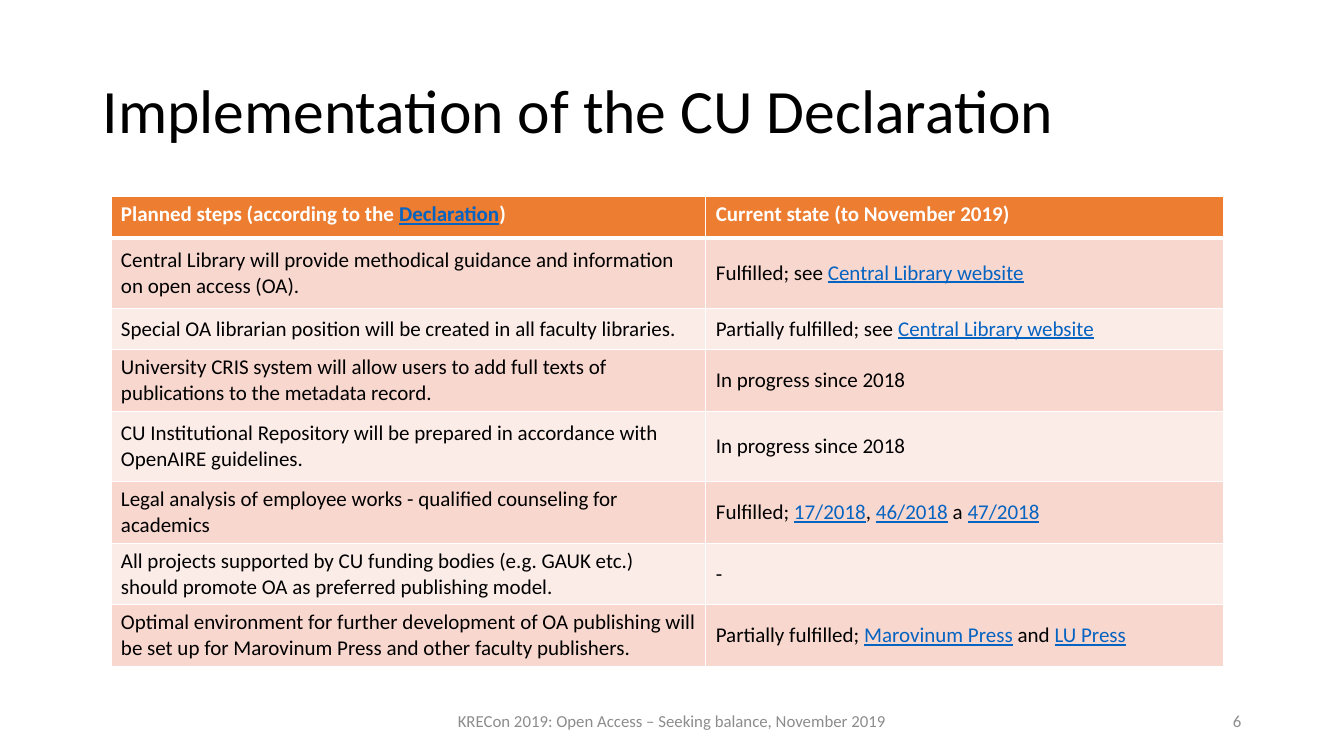
from itertools import product

from lxml.etree import SubElement
from pptx import Presentation
from pptx.dml.color import RGBColor
from pptx.enum.text import MSO_ANCHOR, PP_ALIGN
from pptx.oxml.ns import qn
from pptx.util import Inches, Pt

TITLE = "Implementation of the CU Declaration"
FOOTER = "KRECon 2019: Open Access – Seeking balance, November 2019"
PAGE = "6"

# Words between bars are shown as links.
STEPS = [
    ("Planned steps (according to the |Declaration|)", "Current state (to November 2019)"),
    ("Central Library will provide methodical guidance and information on open access (OA).",
     "Fulfilled; see |Central Library website|"),
    ("Special OA librarian position will be created in all faculty libraries.",
     "Partially fulfilled; see |Central Library website|"),
    ("University CRIS system will allow users to add full texts of publications to the metadata record.",
     "In progress since 2018"),
    ("CU Institutional Repository will be prepared in accordance with OpenAIRE guidelines.",
     "In progress since 2018"),
    ("Legal analysis of employee works - qualified counseling for academics",
     "Fulfilled; |17/2018|, |46/2018| a |47/2018|"),
    ("All projects supported by CU funding bodies (e.g. GAUK etc.) should promote OA as preferred publishing model.",
     "-"),
    ("Optimal environment for further development of OA publishing will be set up for Marovinum Press and other faculty publishers.",
     "Partially fulfilled; |Marovinum Press| and |LU Press|"),
]

COLORS = {"text": "000000", "light": "FFFFFF", "muted": "8C8C8C", "link": "0563C1",
          "header": "ED7D31", "odd": "F8D7CE", "even": "FCECE8"}
FONT = "Calibri"
SLIDE_W, SLIDE_H = 13.33, 7.5
MARGIN = 0.92
FOOTER_TOP, FOOTER_H, FOOTER_W, PAGE_W = 6.95, 0.4, 4.5, 3
TABLE_LEFT, TABLE_TOP = 1.1, 1.95
COLUMNS = [5.9, 5.14]
SINGLE, DOUBLE, TALL = 0.41, 0.61, 0.7
ROWS = [SINGLE, TALL, SINGLE, DOUBLE, TALL, DOUBLE, DOUBLE, DOUBLE]


def rgb(name):
    return RGBColor.from_string(COLORS[name])


def write(frame, text, size=15, color="text", bold=False, align=PP_ALIGN.LEFT,
          anchor=MSO_ANCHOR.MIDDLE, spacing=None):
    frame.word_wrap = True
    frame.vertical_anchor = anchor
    paragraph = frame.paragraphs[0]
    paragraph.alignment = align
    paragraph.line_spacing = spacing
    for index, words in enumerate(text.split("|")):
        if not words:
            continue
        linked = index % 2 == 1
        run = paragraph.add_run()
        run.text = words
        run.font.name, run.font.size, run.font.bold = FONT, Pt(size), bold
        run.font.underline = linked
        run.font.color.rgb = rgb("link" if linked else color)


def add_label(slide, box, text, **style):
    label = slide.shapes.add_textbox(*map(Inches, box))
    write(label.text_frame, text, **style)


def set_borders(cell, **widths):
    properties = cell._tc.get_or_add_tcPr()
    for side, width in widths.items():
        line = SubElement(properties, qn(f"a:ln{side}"), w=str(Pt(width)))
        fill = SubElement(line, qn("a:solidFill"))
        SubElement(fill, qn("a:srgbClr"), val=COLORS["light"])


def add_steps(slide):
    table = slide.shapes.add_table(
        len(ROWS), len(COLUMNS), Inches(TABLE_LEFT), Inches(TABLE_TOP),
        Inches(sum(COLUMNS)), Inches(sum(ROWS))).table
    for column, width in zip(table.columns, COLUMNS):
        column.width = Inches(width)
    for row, height in zip(table.rows, ROWS):
        row.height = Inches(height)
    for r, c in product(range(len(ROWS)), range(len(COLUMNS))):
        cell = table.cell(r, c)
        header = r == 0
        set_borders(cell, L=1, R=1, T=3 if r == 1 else 1, B=3 if header else 1)
        cell.fill.solid()
        cell.fill.fore_color.rgb = rgb("header" if header else "odd" if r % 2 else "even")
        anchor = MSO_ANCHOR.TOP if header else MSO_ANCHOR.MIDDLE
        write(cell.text_frame, STEPS[r][c], color="light" if header else "text",
              bold=header, anchor=anchor)
        cell.vertical_anchor = anchor


def main():
    deck = Presentation()
    deck.slide_width, deck.slide_height = Inches(SLIDE_W), Inches(SLIDE_H)
    slide = deck.slides.add_slide(deck.slide_layouts[6])
    add_label(slide, (MARGIN, 0.4, 11.5, 1.45), TITLE, size=44, spacing=0.9)
    add_label(slide, ((SLIDE_W - FOOTER_W) / 2, FOOTER_TOP, FOOTER_W, FOOTER_H),
              FOOTER, size=12, color="muted", align=PP_ALIGN.CENTER)
    add_label(slide, (SLIDE_W - MARGIN - PAGE_W, FOOTER_TOP, PAGE_W, FOOTER_H),
              PAGE, size=12, color="muted", align=PP_ALIGN.RIGHT)
    add_steps(slide)
    deck.save("out.pptx")


if __name__ == "__main__":
    main()
